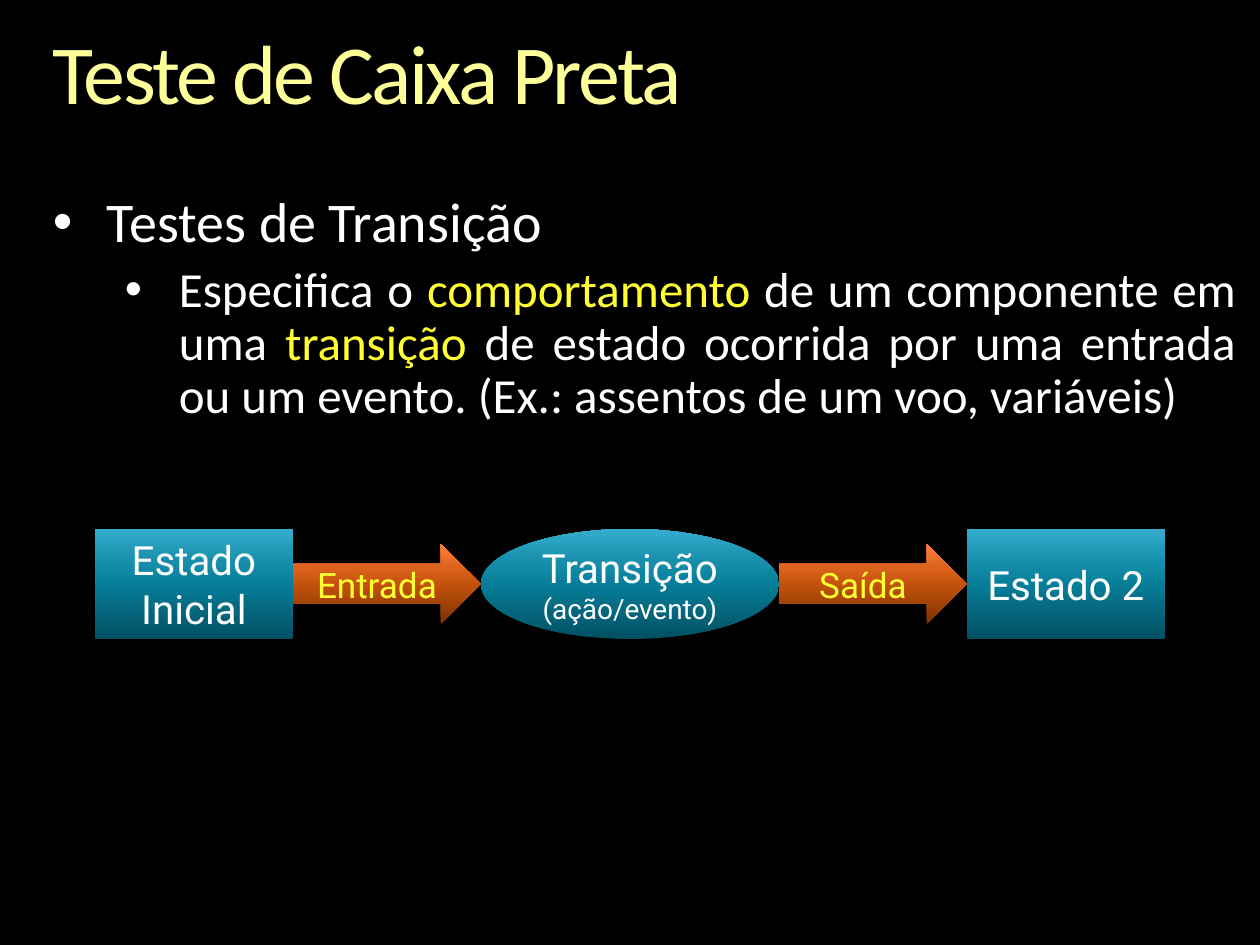
from lxml.etree import SubElement
from pptx import Presentation
from pptx.dml.color import RGBColor
from pptx.enum.shapes import MSO_SHAPE as SHAPE
from pptx.enum.text import MSO_ANCHOR as ANCHOR, MSO_AUTO_SIZE as AUTO_SIZE, PP_ALIGN as ALIGN
from pptx.oxml import parse_xml
from pptx.oxml.ns import nsdecls, qn
from pptx.util import Pt

PX = 914400 / 126
WHITE, YELLOW, BLACK = "FFFFFF", "FFFF33", "000000"
TEAL = {0: "015062", 50: "077E99", 70: "178EAB", 100: "35ADCE"}
ORANGE = {0: "7D3203", 50: "C4520B", 70: "DB631C", 100: "FF803C"}


def px(*lengths):
    return [round(length * PX) for length in lengths]


def add_run(paragraph, text, face, size, color):
    run = paragraph.add_run()
    run.text = text
    for key, value in {"name": face, "size": Pt(size)}.items():
        setattr(run.font, key, value)
    run.font.color.rgb = RGBColor.from_string(color)
    return run


prs = Presentation()
prs.slide_width, prs.slide_height = px(1260, 945)
slide = prs.slides.add_slide(prs.slide_layouts[5])
slide.background.fill.solid()
slide.background.fill.fore_color.rgb = RGBColor.from_string(BLACK)

# Title and body frames
title = slide.shapes.title
title.left, title.top, title.width, title.height = px(53, 32, 1155, 92)
body = slide.shapes.add_textbox(*px(53, 194, 1183, 233))
frame_format = {"margin_left": 0, "margin_right": 0, "margin_top": 0, "margin_bottom": 0,
                "word_wrap": True, "auto_size": AUTO_SIZE.NONE, "vertical_anchor": ANCHOR.TOP}
for box in (title, body):
    for key, value in frame_format.items():
        setattr(box.text_frame, key, value)

# Title text
heading = title.text_frame.paragraphs[0]
heading.alignment, heading.line_spacing = ALIGN.LEFT, 0.9
heading_run = add_run(heading, "Teste de Caixa Preta", "Calibri", 48, "FFFF99")
heading_run.font._element.set("spc", "-150")

# Bulleted text: level, indent, size, space before, alignment, runs
bullets = [
    (0, 54, 32, 0, ALIGN.LEFT, [("Testes de Transição", WHITE)]),
    (1, 126, 28, 6, ALIGN.JUSTIFY, [
        ("Especifica o ", WHITE), ("comportamento ", YELLOW),
        ("de um componente em uma ", WHITE), ("transição ", YELLOW),
        ("de estado ocorrida por uma entrada ou um evento. "
         "(Ex.: assentos de um voo, variáveis)", WHITE)]),
]
for level, indent, size, before, alignment, pieces in bullets:
    item = body.text_frame.add_paragraph() if level else body.text_frame.paragraphs[0]
    item.level, item.alignment, item.line_spacing = level, alignment, 0.9
    item.space_before = Pt(before)
    properties = item._p.get_or_add_pPr()
    left, hanging = px(indent, -54)
    properties.set("marL", str(left))
    properties.set("indent", str(hanging))
    SubElement(properties, qn("a:buFont")).set("typeface", "Arial")
    SubElement(properties, qn("a:buChar")).set("char", "•")
    for text, color in pieces:
        add_run(item, text, "Calibri", size, color)

# Transition chain: each step starts where the one before it ends
steps = [
    (SHAPE.RECTANGLE, 198, 110, TEAL, WHITE, [("Estado Inicial", 23)]),
    (SHAPE.RIGHT_ARROW, 188, 80, ORANGE, YELLOW, [("Entrada", 20)]),
    (SHAPE.OVAL, 298, 110, TEAL, WHITE, [("Transição ", 23), ("(ação/evento)", 16)]),
    (SHAPE.RIGHT_ARROW, 188, 80, ORANGE, YELLOW, [("Saída", 20)]),
    (SHAPE.RECTANGLE, 198, 110, TEAL, WHITE, [("Estado 2", 23)]),
]
x, middle = 95, 584
for kind, width, height, gradient, color, pieces in steps:
    step = slide.shapes.add_shape(kind, *px(x, middle - height / 2, width, height))
    step.shadow.inherit = False
    step.line.fill.background()
    stops = "".join(f'<a:gs pos="{pos * 1000}"><a:srgbClr val="{stop}"/></a:gs>'
                    for pos, stop in gradient.items())
    step._element.spPr.find(qn("a:prstGeom")).addnext(parse_xml(
        f'<a:gradFill {nsdecls("a")} rotWithShape="1"><a:gsLst>{stops}</a:gsLst>'
        '<a:lin ang="16200000" scaled="0"/></a:gradFill>'))
    step.text_frame.word_wrap = True
    step.text_frame.vertical_anchor = ANCHOR.MIDDLE
    label = step.text_frame.paragraphs[0]
    label.alignment = ALIGN.CENTER
    for text, size in pieces:
        add_run(label, text, "Roboto", size, color)
    x += width

prs.save("out.pptx")
